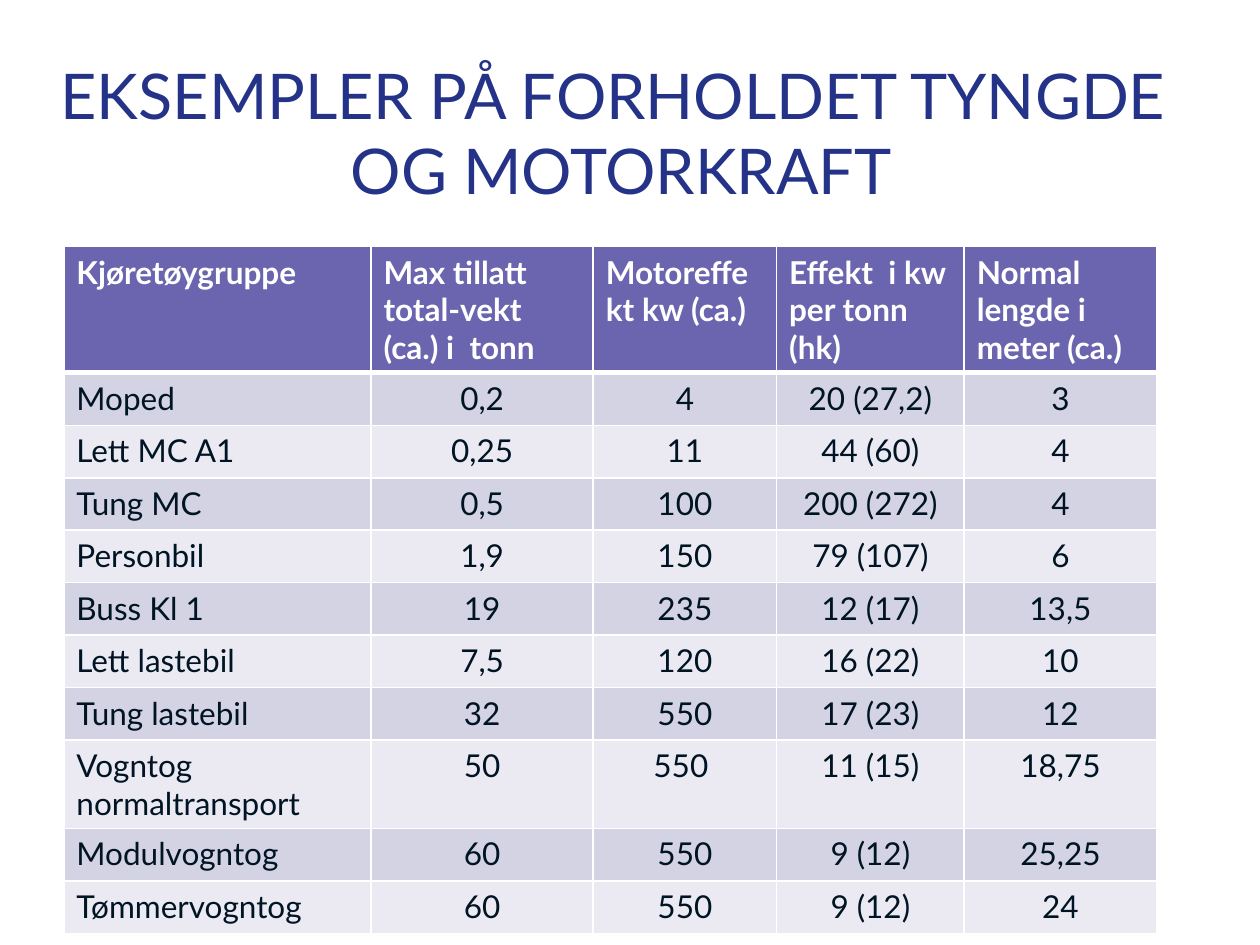
from dataclasses import dataclass

from lxml import etree
from pptx import Presentation
from pptx.dml.color import RGBColor
from pptx.enum import text
from pptx.oxml import ns
from pptx.util import Pt


@dataclass(frozen=True)
class Theme:
    font: str = "Lato"
    title_size: int = 36
    table_size: int = 18
    title: str = "243388"
    ink: str = "001423"
    white: str = "FFFFFF"
    header: str = "6B64AF"
    bands: tuple = ("D4D3E3", "EBEAF2")


theme = Theme()


def style_text(paragraph, size, color, bold=False):
    for run in paragraph.runs:
        run.font.name = theme.font
        run.font.size = Pt(size)
        run.font.bold = bold
        run.font.color.rgb = RGBColor.from_string(color)


def add_borders(cell, top, bottom):
    """Draw white cell borders; the side borders are always 1 pt."""
    properties = cell._tc.get_or_add_tcPr()
    for side, width in (("L", 1), ("R", 1), ("T", top), ("B", bottom)):
        line = etree.SubElement(properties, ns.qn(f"a:ln{side}"), w=str(Pt(width)))
        fill = etree.SubElement(line, ns.qn("a:solidFill"))
        etree.SubElement(fill, ns.qn("a:srgbClr"), val=theme.white)


vehicle_rows = [
    ("Kjøretøygruppe", "Max tillatt total-vekt (ca.) i  tonn", "Motoreffekt kw (ca.)",
     "Effekt  i kw per tonn (hk)", "Normal lengde i meter (ca.)"),
    ("Moped", "0,2", "4", "20 (27,2)", "3"),
    ("Lett MC A1", "0,25", "11", "44 (60)", "4"),
    ("Tung MC", "0,5", "100", "200 (272)", "4"),
    ("Personbil", "1,9", "150", "79 (107)", "6"),
    ("Buss Kl 1", "19", "235", "12 (17)", "13,5"),
    ("Lett lastebil", "7,5", "120", "16 (22)", "10"),
    ("Tung lastebil", "32", "550", "17 (23)", "12"),
    ("Vogntog normaltransport", "50", "550 ", "11 (15)", "18,75"),
    ("Modulvogntog", "60", "550", "9 (12)", "25,25"),
    ("Tømmervogntog", "60", "550", "9 (12)", "24"),
]
column_widths = [175.5, 127, 104.75, 107.25, 110]
header_height, row_height = 15, 30

presentation = Presentation()
presentation.slide_width, presentation.slide_height = Pt(720), Pt(540)
slide = presentation.slides.add_slide(presentation.slide_layouts[5])

title = slide.shapes.title
title.left, title.top, title.width, title.height = Pt(31), Pt(32), Pt(648), Pt(61)
frame = title.text_frame
frame.text = "EKSEMPLER PÅ FORHOLDET TYNGDE \vOG MOTORKRAFT"
frame.margin_left = frame.margin_top = frame.margin_right = frame.margin_bottom = 0
frame.word_wrap = True
frame.auto_size = text.MSO_AUTO_SIZE.NONE
frame.vertical_anchor = text.MSO_ANCHOR.TOP
frame.paragraphs[0].alignment = text.PP_ALIGN.CENTER
style_text(frame.paragraphs[0], theme.title_size, theme.title)

table_height = header_height + row_height * (len(vehicle_rows) - 1)
vehicle_table = slide.shapes.add_table(
    len(vehicle_rows), len(column_widths),
    Pt(36.5), Pt(141), Pt(sum(column_widths)), Pt(table_height),
).table
for column, width in zip(vehicle_table.columns, column_widths):
    column.width = Pt(width)

for row_index, values in enumerate(vehicle_rows):
    is_header = row_index == 0
    vehicle_table.rows[row_index].height = Pt(header_height if is_header else row_height)
    background = theme.header if is_header else theme.bands[(row_index - 1) % 2]
    for column_index, value in enumerate(values):
        cell = vehicle_table.cell(row_index, column_index)
        add_borders(cell, top=3 if row_index == 1 else 1, bottom=3 if is_header else 1)
        cell.fill.solid()
        cell.fill.fore_color.rgb = RGBColor.from_string(background)
        paragraph = cell.text_frame.paragraphs[0]
        paragraph.text = value
        if not is_header and column_index > 0:
            paragraph.alignment = text.PP_ALIGN.CENTER
        style_text(paragraph, theme.table_size,
                   theme.white if is_header else theme.ink, bold=is_header)

presentation.save("out.pptx")
